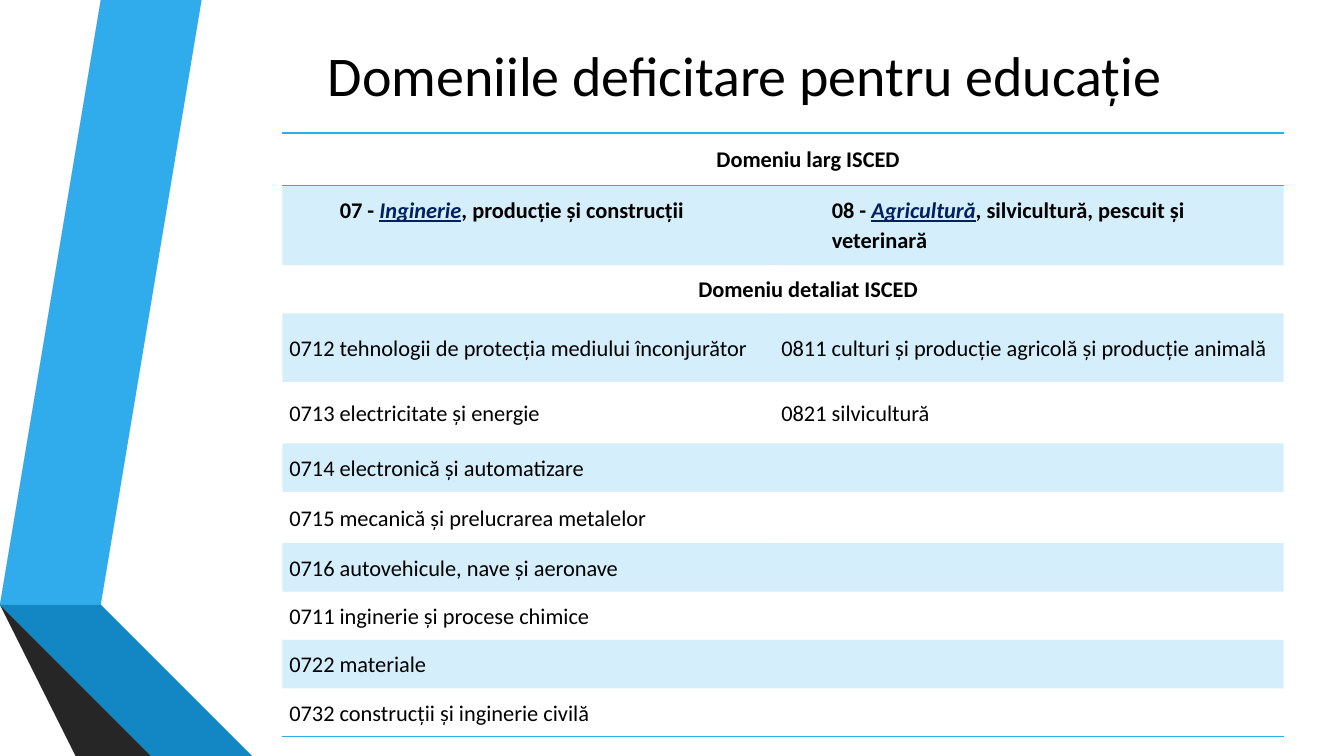
from lxml.etree import SubElement
from pptx import Presentation
from pptx.dml.color import RGBColor
from pptx.enum.text import MSO_ANCHOR as Anchor, MSO_AUTO_SIZE as AutoSize, PP_ALIGN as Align
from pptx.oxml.ns import qn
from pptx.util import Inches, Pt

COLORS = {
    "blue": "30ACEC", "blue_mid": "1287C3", "blue_dark": "0C5A82",
    "gray": "595959", "gray_mid": "404040", "gray_dark": "262626",
    "navy": "002060", "black": "000000",
}
FONT = "Calibri"
NO_STYLE = "{2D5ABB26-0587-4C30-8999-92F81FD0307C}"

# Ribbon facets, in inches from the top left of the ribbon's box
RIBBON = [
    ("blue", [(0.5, 5.78), (0.77, 5.83), (1.73, 0), (1.45, 0)]),
    ("gray", [(1.39, 0), (1.11, 0), (0.16, 5.73), (0.44, 5.77)]),
    ("gray_dark", [(0.16, 5.73), (1.45, 7.5), (1.51, 7.5)]),
    ("blue_dark", [(0.5, 5.79), (2.08, 7.5), (2.14, 7.5)]),
    ("blue_mid", [(0.5, 5.78), (2.14, 7.5), (2.83, 7.5), (0.77, 5.83)]),
    ("gray_mid", [(2.02, 7.5), (0.48, 5.83), (0.44, 5.77), (0.16, 5.73), (1.51, 7.5)]),
]

# Broad fields: number, highlighted word, rest of the name
BROAD_FIELDS = [
    ("07 - ", "Inginerie", ", producție și construcții"),
    ("08 - ", "Agricultură", ", silvicultură, pescuit și veterinarӑ"),
]
DETAILED_FIELDS = [
    ("0712 tehnologii de protecția mediului înconjurător",
     "0811 culturi și producție agricolă și producție animală"),
    ("0713 electricitate și energie", "0821 silvicultură"),
    ("0714 electronică și automatizare", ""),
    ("0715 mecanică și prelucrarea metalelor", ""),
    ("0716 autovehicule, nave și aeronave", ""),
    ("0711 inginerie și procese chimice", ""),
    ("0722 materiale", ""),
    ("0732 construcții și inginerie civilă", ""),
]
COLUMN_WIDTHS = [4.88, 5.05]
ROW_HEIGHTS = [0.52, 0.79, 0.48, 0.68, 0.61, 0.48, 0.51] + [0.48] * 4


def rgb(name):
    return RGBColor.from_string(COLORS[name])


def draw_ribbon(slide, left, top):
    for color, points in RIBBON:
        corners = [(left + x, top + y) for x, y in points]
        builder = slide.shapes.build_freeform(*corners[0], scale=Inches(1))
        builder.add_line_segments(corners[1:], close=True)
        facet = builder.convert_to_shape()
        facet.fill.solid()
        facet.fill.fore_color.rgb = rgb(color)
        facet.line.fill.background()
        facet.shadow.inherit = False


def fill_title(slide, left, top, width, height):
    title = slide.shapes.title
    title.left, title.top = Inches(left), Inches(top)
    title.width, title.height = Inches(width), Inches(height)
    frame = title.text_frame
    frame.text = "Domeniile deficitare pentru educație"
    frame.auto_size = AutoSize.NONE
    frame.vertical_anchor = Anchor.MIDDLE
    heading = frame.paragraphs[0]
    heading.alignment = Align.CENTER
    heading.font.name, heading.font.size = FONT, Pt(40)
    heading.font.color.rgb = rgb("black")


def rule_cell(cell, edge):
    """Draw a 1 pt blue border; edge is lnT or lnB. Call before the fill is set."""
    line = SubElement(cell._tc.get_or_add_tcPr(), qn(f"a:{edge}"), w=str(Pt(1)))
    solid = SubElement(line, qn("a:solidFill"))
    SubElement(solid, qn("a:srgbClr"), val=COLORS["blue"])


def tint_cell(cell):
    cell.fill.solid()
    cell.fill.fore_color.rgb = rgb("blue")
    tint = cell._tc.tcPr.find(f".//{qn('a:solidFill')}/{qn('a:srgbClr')}")
    SubElement(tint, qn("a:alpha"), val="20000")


def write_cell(cell, parts, bold=False, indent=0.0, align=Align.LEFT):
    line = cell.text_frame.paragraphs[0]
    line.alignment, line.line_spacing = align, 1.07
    line.font.name, line.font.size, line.font.bold = FONT, Pt(16), bold
    line.font.color.rgb = rgb("black")
    if indent:
        line._p.get_or_add_pPr().set("marL", str(Inches(indent)))
    for part in parts:
        line.add_run().text = part
    return line


def add_fields_table(slide, left, top):
    fields = slide.shapes.add_table(
        len(ROW_HEIGHTS), len(COLUMN_WIDTHS), Inches(left), Inches(top),
        Inches(sum(COLUMN_WIDTHS)), Inches(sum(ROW_HEIGHTS))).table
    fields.first_row = fields.horz_banding = False
    fields._tbl.tblPr.find(qn("a:tableStyleId")).text = NO_STYLE
    for column, width in zip(fields.columns, COLUMN_WIDTHS):
        column.width = Inches(width)

    # Row heights, cell margins, outer rules and alternate tints
    last = len(ROW_HEIGHTS) - 1
    edges = {0: ("lnT", "lnB"), last: ("lnB",)}
    for index, height in enumerate(ROW_HEIGHTS):
        fields.rows[index].height = Inches(height)
        for cell in fields.rows[index].cells:
            cell.margin_left = cell.margin_right = Inches(0.07)
            cell.margin_top = cell.margin_bottom = 0
            cell.vertical_anchor = Anchor.MIDDLE
            for edge in edges.get(index, ()):
                rule_cell(cell, edge)
            if index % 2:
                tint_cell(cell)
            else:
                cell.fill.background()

    # Section headings across both columns
    for index, heading in ((0, "Domeniu larg ISCED"), (2, "Domeniu detaliat ISCED")):
        fields.cell(index, 0).merge(fields.cell(index, 1))
        write_cell(fields.cell(index, 0), [heading], True, 0.5, Align.CENTER)

    # Broad fields, first lines level with each other
    for column, parts in enumerate(BROAD_FIELDS):
        cell = fields.cell(1, column)
        cell.vertical_anchor, cell.margin_top = Anchor.TOP, Inches(0.1)
        keyword = write_cell(cell, parts, True, 0.5).runs[1].font
        keyword.italic = keyword.underline = True
        keyword.color.rgb = rgb("navy")

    # Detailed fields
    for index, names in enumerate(DETAILED_FIELDS, start=3):
        for column, name in enumerate(names):
            write_cell(fields.cell(index, column), [name] if name else [])


def main():
    deck = Presentation()
    deck.slide_width, deck.slide_height = Inches(13.33), Inches(7.5)
    slide = deck.slides.add_slide(deck.slide_layouts[5])
    draw_ribbon(slide, 0, 0)
    fill_title(slide, 1.74, 0.08, 11.29, 1.32)
    add_fields_table(slide, 2.8, 1.32)
    deck.save("out.pptx")


if __name__ == "__main__":
    main()
